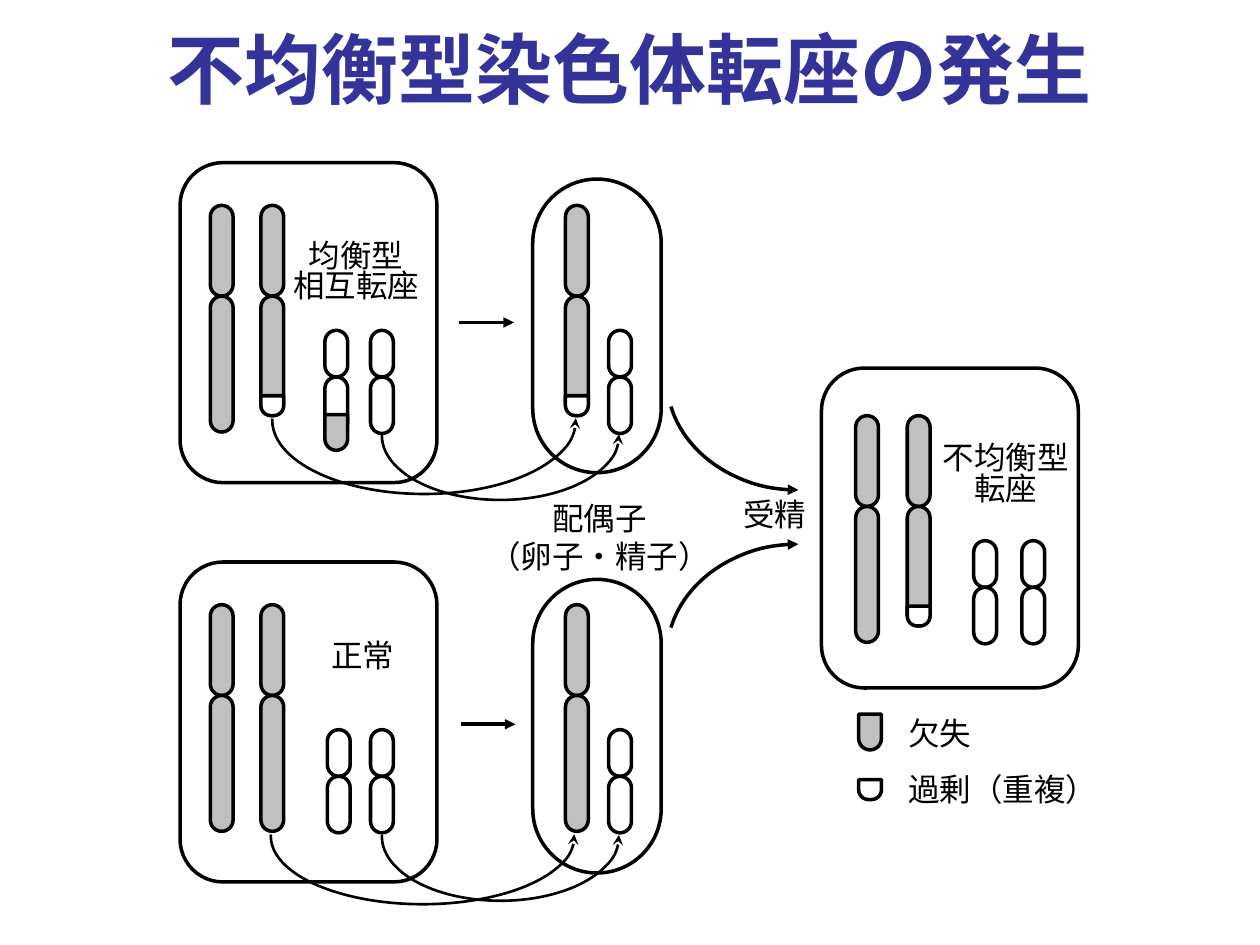
from dataclasses import dataclass

from lxml.etree import SubElement
from pptx import Presentation
from pptx.dml.color import RGBColor
from pptx.enum.shapes import MSO_CONNECTOR, MSO_SHAPE
from pptx.enum.text import MSO_ANCHOR, PP_ALIGN
from pptx.oxml.ns import qn
from pptx.util import Cm, Pt


@dataclass(frozen=True)
class Theme:
    font: str = "Noto Sans CJK JP"
    title_color: RGBColor = RGBColor(0x33, 0x33, 0x99)
    ink: RGBColor = RGBColor(0, 0, 0)
    white: RGBColor = RGBColor(255, 255, 255)
    gray: RGBColor = RGBColor(0xC0, 0xC0, 0xC0)
    title_size: Pt = Pt(44)
    body_size: Pt = Pt(18)
    outline: Pt = Pt(2)
    thin: Pt = Pt(1.5)


THEME = Theme()
ARM_WIDTH = 0.46
LARGE_ARMS = (1.83, 2.74)
SHORTENED_ARMS = (1.83, 2.41)
SMALL_ARMS = (0.94, 1.14)
SMALL_OFFSET = 2.52
DUPLICATION_OFFSET = 3.84
DUPLICATION_HEIGHT = 0.4
DELETION_OFFSET = 1.7
DELETION_HEIGHT = 0.72


def add_text(slide, text, left, top, width, height, size=THEME.body_size,
             color=THEME.ink, bold=False, align=PP_ALIGN.LEFT, spacing=1.0,
             anchor=MSO_ANCHOR.TOP, wrap=True):
    box = slide.shapes.add_textbox(Cm(left), Cm(top), Cm(width), Cm(height))
    frame = box.text_frame
    frame.word_wrap = wrap
    frame.vertical_anchor = anchor
    frame.text = text
    for paragraph in frame.paragraphs:
        paragraph.alignment = align
        paragraph.line_spacing = spacing
        for run in paragraph.runs:
            run.font.name = THEME.font
            run.font.size = size
            run.font.bold = bold
            run.font.color.rgb = color
            east_asian = SubElement(run._r.get_or_add_rPr(), qn("a:ea"))
            east_asian.set("typeface", THEME.font)


def add_outlined(shapes, kind, left, top, width, height, fill=THEME.white, rounding=None):
    shape = shapes.add_shape(kind, Cm(left), Cm(top), Cm(width), Cm(height))
    shape.shadow.inherit = False
    shape.fill.solid()
    shape.fill.fore_color.rgb = fill
    shape.line.color.rgb = THEME.ink
    shape.line.width = THEME.outline
    if rounding is not None:
        shape.adjustments[0] = rounding
    return shape


def flip(shape, *directions):
    transform = shape._element.spPr.find(qn("a:xfrm"))
    for direction in directions:
        transform.set(direction, "1")


def add_arrowhead(shape, end, kind):
    outline = shape._element.spPr.find(qn("a:ln"))
    SubElement(outline, qn(f"a:{end}")).set("type", kind)


def add_tip(shapes, left, top, height, fill):
    tip = add_outlined(shapes, MSO_SHAPE.ROUND_2_SAME_RECTANGLE,
                       left, top, ARM_WIDTH, height, fill, 0.5)
    flip(tip, "flipV")


def add_chromosome(slide, left, top, arms, fill, tip=None):
    group = slide.shapes.add_group_shape()
    arm_top = top
    for height in arms:
        add_outlined(group.shapes, MSO_SHAPE.ROUNDED_RECTANGLE,
                     left, arm_top, ARM_WIDTH, height, fill, 0.5)
        arm_top += height
    if tip:
        offset, height, tip_fill = tip
        add_tip(group.shapes, left, top + offset, height, tip_fill)


def add_large(slide, left, top):
    add_chromosome(slide, left, top, LARGE_ARMS, THEME.gray)


def add_large_with_duplication(slide, left, top):
    add_chromosome(slide, left, top, SHORTENED_ARMS, THEME.gray,
                   (DUPLICATION_OFFSET, DUPLICATION_HEIGHT, THEME.white))


def add_small(slide, left, top, tip=None):
    add_chromosome(slide, left, top + SMALL_OFFSET, SMALL_ARMS, THEME.white, tip)


def add_arc(slide, left, top, width, height, angles, flips, end, head, weight):
    arc = slide.shapes.add_shape(MSO_SHAPE.ARC, Cm(left), Cm(top), Cm(width), Cm(height))
    arc.shadow.inherit = False
    arc.fill.background()
    arc.line.color.rgb = THEME.ink
    arc.line.width = weight
    arc.adjustments[0], arc.adjustments[1] = angles
    flip(arc, *flips)
    add_arrowhead(arc, end, head)


def add_inheritance(slide, left, top, width, height):
    add_arc(slide, left, top, width, height, (107.59, 0.47), ["flipV"],
            "tailEnd", "stealth", THEME.thin)


def add_fertilization(slide, top, *flips):
    add_arc(slide, 13.44, top, 5.31, 4.5, (162, 208.54), flips,
            "headEnd", "triangle", THEME.outline)


def add_arrow(slide, left, right, y):
    arrow = slide.shapes.add_connector(MSO_CONNECTOR.STRAIGHT,
                                       Cm(left), Cm(y), Cm(right), Cm(y))
    arrow.line.color.rgb = THEME.ink
    arrow.line.width = THEME.outline
    add_arrowhead(arrow, "tailEnd", "triangle")
    SubElement(arrow._element.spPr, qn("a:effectLst"))


def add_cells(slide):
    for left, top in ((16.56, 7.42), (3.63, 11.33), (3.63, 3.28)):
        add_outlined(slide.shapes, MSO_SHAPE.ROUNDED_RECTANGLE, left, top, 5.18, 6.45)
    for top in (11.68, 3.61):
        add_outlined(slide.shapes, MSO_SHAPE.ROUNDED_RECTANGLE,
                     10.74, top, 2.59, 5.92, rounding=0.5)


def add_chromosomes(slide):
    carrier, normal, child = 4.14, 12.19, 8.38
    for left, top in ((4.24, carrier), (4.24, normal), (5.26, normal),
                      (11.4, normal), (17.25, child)):
        add_large(slide, left, top)
    for left, top in ((5.26, carrier), (11.4, carrier), (18.29, child)):
        add_large_with_duplication(slide, left, top)
    for left, top in ((7.47, carrier), (12.27, carrier), (6.6, normal), (7.47, normal),
                      (12.27, normal), (19.63, child), (20.6, child)):
        add_small(slide, left, top)
    add_small(slide, 6.55, carrier, (DELETION_OFFSET, DELETION_HEIGHT, THEME.gray))


def add_flow(slide):
    add_inheritance(slide, 5.49, 6.99, 6.12, 2.97)
    add_inheritance(slide, 7.7, 7.49, 4.78, 2.59)
    add_inheritance(slide, 5.46, 15.49, 6.12, 2.74)
    add_inheritance(slide, 7.7, 15.57, 4.78, 2.59)
    add_arrow(slide, 9.25, 10.36, 6.5)
    add_arrow(slide, 9.3, 10.39, 14.6)
    add_fertilization(slide, 10.97, "flipH")
    add_fertilization(slide, 5.38, "flipH", "flipV")


def add_labels(slide):
    center = PP_ALIGN.CENTER
    add_text(slide, "均衡型\n相互転座", 4.6, 4.78, 5.16, 1.5, align=center, spacing=0.8)
    add_text(slide, "不均衡型\n転座", 17.7, 8.86, 5.16, 1.5, align=center, spacing=0.8)
    add_text(slide, "正常", 5.41, 12.85, 3.81, 0.86, align=center, spacing=0.8)
    add_text(slide, "配偶子\n（卵子・精子）", 9.55, 9.93, 5.08, 1.8, align=center)
    add_text(slide, "受精", 14.73, 9.86, 1.8, 1.02, wrap=False)


def add_legend(slide):
    add_tip(slide.shapes, 17.31, 14.4, DELETION_HEIGHT, THEME.gray)
    add_text(slide, "欠失", 18.06, 14.27, 1.93, 1.02)
    add_tip(slide.shapes, 17.31, 15.72, DUPLICATION_HEIGHT, THEME.white)
    add_text(slide, "過剰（重複）", 18.06, 15.39, 4.7, 1.02)


def main():
    presentation = Presentation()
    presentation.slide_width = Cm(25.4)
    presentation.slide_height = Cm(19.05)
    slide = presentation.slides.add_slide(presentation.slide_layouts[6])
    add_text(slide, "不均衡型染色体転座の発生", 1.27, 0.36, 22.86, 2.01,
             size=THEME.title_size, color=THEME.title_color, bold=True,
             align=PP_ALIGN.CENTER, anchor=MSO_ANCHOR.MIDDLE)
    add_cells(slide)
    add_chromosomes(slide)
    add_flow(slide)
    add_labels(slide)
    add_legend(slide)
    presentation.save("out.pptx")


if __name__ == "__main__":
    main()
